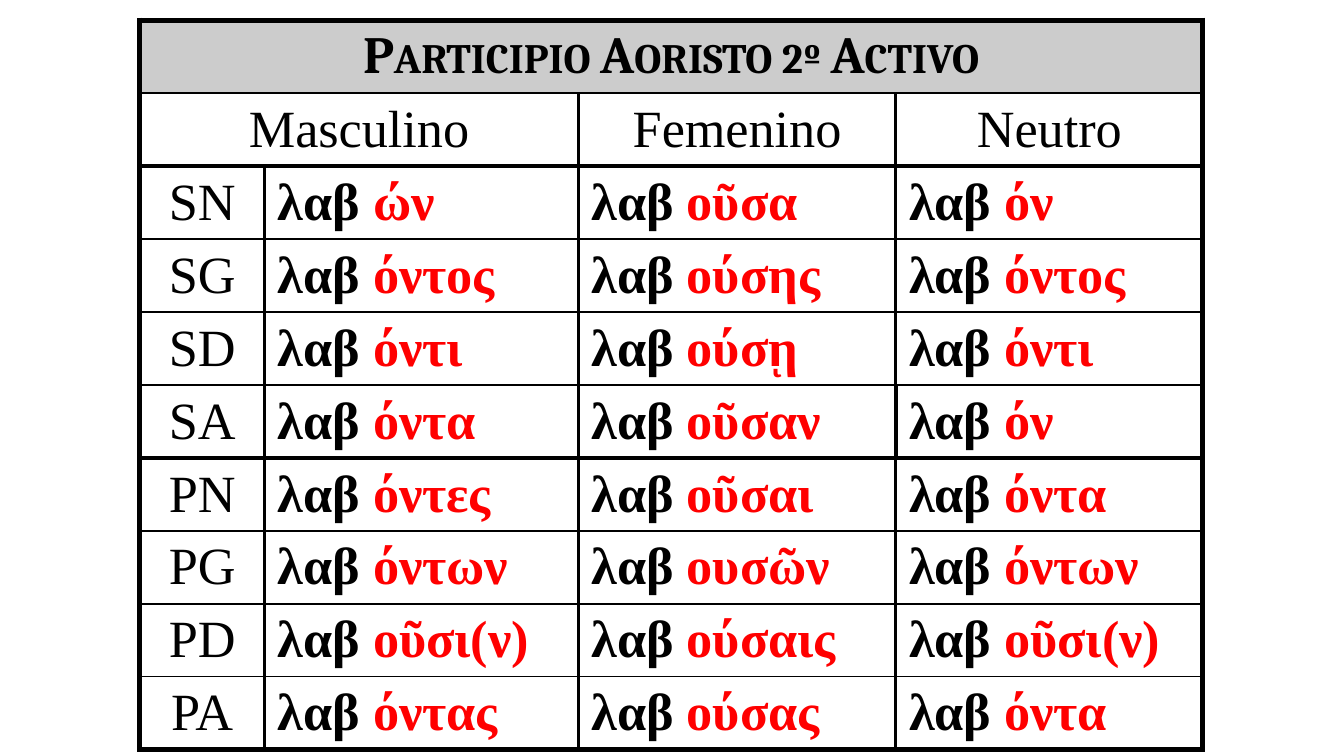
from dataclasses import dataclass

from lxml import etree
from pptx import Presentation
from pptx import util as u
from pptx.dml.color import RGBColor
from pptx.enum import text
from pptx.oxml.ns import qn


@dataclass(frozen=True)
class Theme:
    ink: str = "000000"
    ending: str = "FF0000"
    title_fill: str = "CCCCCC"
    title_font: str = "Cambria"
    body_font: str = "Times New Roman"
    size: int = 28
    frame: float = 3
    divider: float = 2
    number_divider: float = 2.25
    rule: float = 1


THEME = Theme()
TITLE = "Participio Aoristo 2º Activo"
GENDERS = {0: "Masculino", 2: "Femenino", 3: "Neutro"}
STEM = "λαβ "
ENDINGS = {
    "SN": ("ών", "οῦσα", "όν"),
    "SG": ("όντος", "ούσης", "όντος"),
    "SD": ("όντι", "ούσῃ", "όντι"),
    "SA": ("όντα", "οῦσαν", "όν"),
    "PN": ("όντες", "οῦσαι", "όντα"),
    "PG": ("όντων", "ουσῶν", "όντων"),
    "PD": ("οῦσι(ν)", "ούσαις", "οῦσι(ν)"),
    "PA": ("όντας", "ούσας", "όντα"),
}
COLUMN_WIDTHS = (2.36, 5.93, 6, 5.8)
ROW_HEIGHT = 1.38
HEADER_ROWS = 2
ROWS = HEADER_ROWS + len(ENDINGS)
COLUMNS = len(COLUMN_WIDTHS)
LAST_SINGULAR = 5


def write(cell, words, font=THEME.body_font, color=THEME.ink, bold=False,
          small_caps=False, align=text.PP_ALIGN.CENTER):
    paragraph = cell.text_frame.paragraphs[0]
    paragraph.alignment = align
    run = paragraph.add_run()
    run.text = words
    run.font.name = font
    run.font.size = u.Pt(THEME.size)
    run.font.bold = bold
    run.font.color.rgb = RGBColor.from_string(color)
    if small_caps:
        run._r.get_or_add_rPr().set("cap", "small")


def write_form(cell, ending):
    cell.margin_top = cell.margin_bottom = 0
    cell.margin_right = u.Cm(0.15)
    for words, color in ((STEM, THEME.ink), (ending, THEME.ending)):
        write(cell, words, color=color, bold=True, align=text.PP_ALIGN.JUSTIFY)


def horizontal_width(edge):
    special = {0: THEME.frame, HEADER_ROWS: THEME.divider,
               LAST_SINGULAR + 1: THEME.number_divider, ROWS: THEME.frame}
    return special.get(edge, THEME.rule)


def vertical_width(row, edge):
    if edge in (0, COLUMNS):
        return THEME.frame
    if row == 0 or (row == 1 and edge == 1):
        return 0
    return THEME.number_divider if row == LAST_SINGULAR else THEME.divider


def draw_border(cell, side, width):
    properties = cell._tc.get_or_add_tcPr()
    line = etree.SubElement(properties, qn(f"a:{side}"), w=str(u.Pt(width)))
    if width:
        fill = etree.SubElement(line, qn("a:solidFill"))
        etree.SubElement(fill, qn("a:srgbClr"), val=THEME.ink)
    else:
        etree.SubElement(line, qn("a:noFill"))


def format_cell(cell, row, column):
    right = column + (cell.span_width if cell.is_merge_origin else 1)
    draw_border(cell, "lnL", vertical_width(row, column))
    draw_border(cell, "lnR", vertical_width(row, right))
    draw_border(cell, "lnT", horizontal_width(row))
    draw_border(cell, "lnB", horizontal_width(row + 1))
    cell.vertical_anchor = text.MSO_ANCHOR.MIDDLE
    cell.margin_left = cell.margin_right = u.Cm(0.25)
    cell.margin_top = cell.margin_bottom = u.Cm(0.1)
    if row == 0:
        cell.fill.solid()
        cell.fill.fore_color.rgb = RGBColor.from_string(THEME.title_fill)
    else:
        cell.fill.background()


def add_grid(slide):
    grid = slide.shapes.add_table(
        ROWS, COLUMNS, u.Cm(2.64), u.Cm(0.38),
        u.Cm(sum(COLUMN_WIDTHS)), u.Cm(ROW_HEIGHT * ROWS)).table
    grid.first_row = grid.horz_banding = False
    for column, width in zip(grid.columns, COLUMN_WIDTHS):
        column.width = u.Cm(width)
    for row in grid.rows:
        row.height = u.Cm(ROW_HEIGHT)
    grid.cell(0, 0).merge(grid.cell(0, COLUMNS - 1))
    grid.cell(1, 0).merge(grid.cell(1, 1))
    for row in range(ROWS):
        for column in range(COLUMNS):
            format_cell(grid.cell(row, column), row, column)
    return grid


def fill_paradigm(grid):
    write(grid.cell(0, 0), TITLE, font=THEME.title_font, bold=True, small_caps=True)
    for column, gender in GENDERS.items():
        write(grid.cell(1, column), gender)
    for row, (case, endings) in enumerate(ENDINGS.items(), HEADER_ROWS):
        write(grid.cell(row, 0), case)
        for column, ending in enumerate(endings, 1):
            write_form(grid.cell(row, column), ending)


def main():
    deck = Presentation()
    deck.slide_width, deck.slide_height = u.Cm(25.4), u.Cm(14.29)
    slide = deck.slides.add_slide(deck.slide_layouts[6])
    fill_paradigm(add_grid(slide))
    deck.save("out.pptx")


if __name__ == "__main__":
    main()
